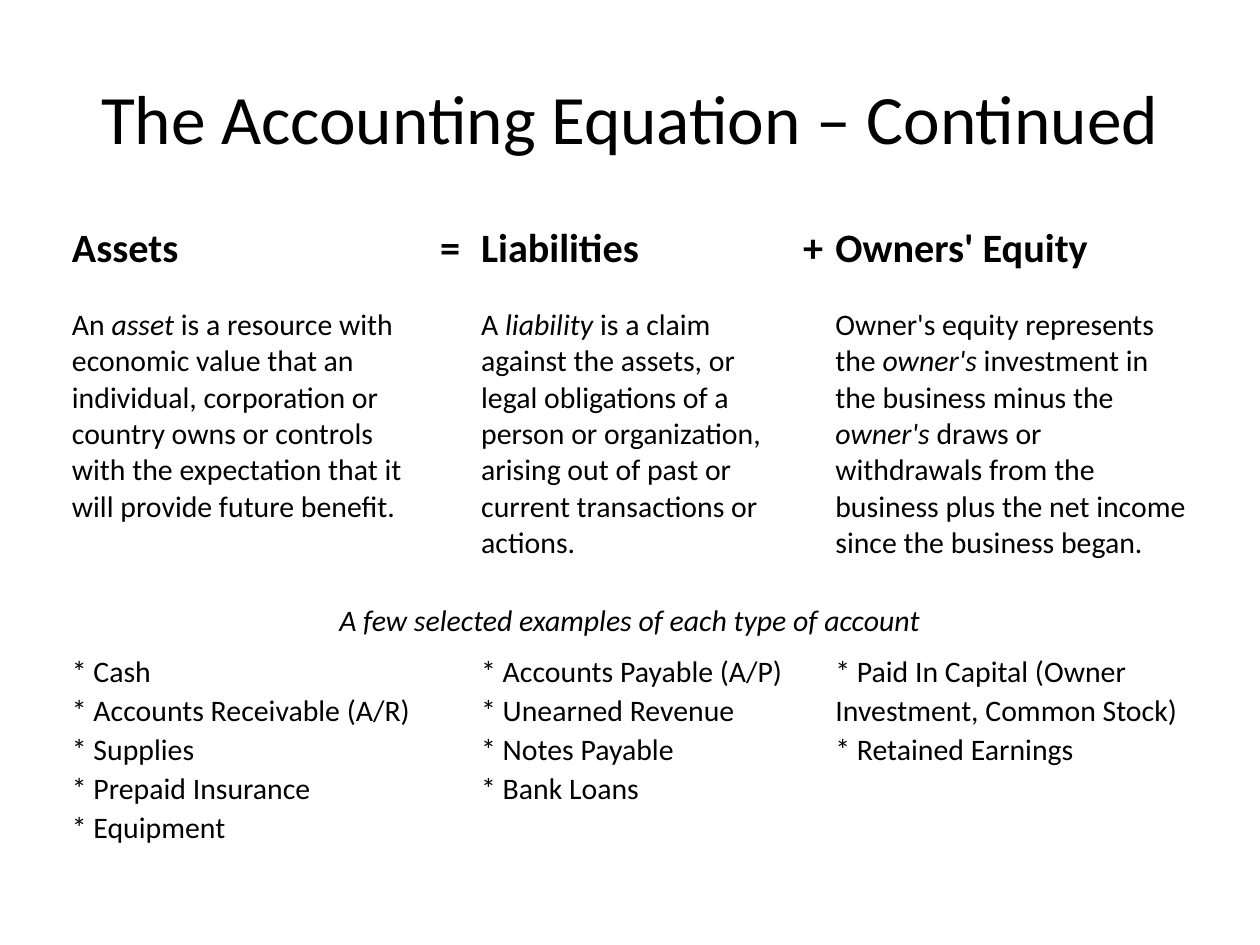
from dataclasses import dataclass

import lxml.etree
import pptx
import pptx.dml.color
import pptx.enum.text
import pptx.oxml.ns
import pptx.util

Cm = pptx.util.Cm
Pt = pptx.util.Pt
ALIGN = pptx.enum.text.PP_ALIGN
ANCHOR = pptx.enum.text.MSO_ANCHOR

FONT = "Calibri"
INK = "000000"
COLS = (7.06, 1.19, 6.3, 0.84, 7.16)
INSETS = {"margin_left": 0.03, "margin_right": 0.03, "margin_top": 0.03, "margin_bottom": 0}
PLAIN = {"first_row": False, "horz_banding": False}


@dataclass
class Row:
    """A table row; text between underscores is italic."""
    height: float
    texts: dict[int, str]
    size: float = 17
    bold: bool = False
    anchor: ANCHOR = ANCHOR.BOTTOM
    span: tuple[int, int] | None = None


ROWS = [
    Row(1.07, {0: "Assets", 1: "=", 2: "Liabilities", 3: "+", 4: "Owners' Equity"},
        size=23, bold=True),
    Row(0.64, {}),
    Row(5.87, {
        0: "An _asset_ is a resource with economic value that an individual, "
           "corporation or country owns or controls with the expectation that "
           "it will provide future benefit.",
        2: "A_ liability_ is a claim against the assets, or legal obligations of "
           "a person or organization, arising out of past or current "
           "transactions or actions.",
        4: "Owner's equity represents the _owner's_ investment in the business "
           "minus the _owner's_ draws or withdrawals from the business plus the "
           "net income since the business began.",
    }, anchor=ANCHOR.TOP),
    Row(0.86, {0: "_A few selected examples of each type of account_"}, span=(0, 4)),
    Row(1.02, {0: "* Cash", 2: "* Accounts Payable (A/P)", 4: "* Paid In Capital (Owner"},
        span=(2, 3)),
    Row(0.79, {0: "* Accounts Receivable (A/R)", 2: "* Unearned Revenue",
               4: "Investment, Common Stock)"}, span=(0, 1)),
    Row(0.79, {0: "* Supplies", 2: "* Notes Payable", 4: "* Retained Earnings"}),
    Row(0.79, {0: "* Prepaid Insurance", 2: "* Bank Loans"}),
    Row(0.79, {0: "* Equipment"}),
]


def style(font, size: float, color: str = INK, bold: bool = False, italic: bool = False) -> None:
    look = {"name": FONT, "size": Pt(size), "bold": bold, "italic": italic}
    for name, value in look.items():
        setattr(font, name, value)
    font.color.rgb = pptx.dml.color.RGBColor.from_string(color)


def write(par, text: str, size: float, bold: bool = False) -> None:
    for i, part in enumerate(text.split("_")):
        if part:
            run = par.add_run()
            run.text = part
            style(run.font, size, bold=bold, italic=i % 2 == 1)


def fill_cell(cell, row: Row, text: str, center: bool) -> None:
    cell.fill.background()
    cell.vertical_anchor = row.anchor
    for name, value in INSETS.items():
        setattr(cell, name, Cm(value))
    par = cell.text_frame.paragraphs[0]
    par.alignment = ALIGN.CENTER if center else ALIGN.LEFT
    if text:
        write(par, text, row.size, row.bold)
    else:
        # Small type keeps an empty cell from stretching its row
        lxml.etree.SubElement(par._p, pptx.oxml.ns.qn("a:endParaRPr"), sz="1000")


def add_title(slide, text: str) -> None:
    title = slide.shapes.title
    box = {"left": 1.27, "top": 0.76, "width": 22.86, "height": 3.18}
    for name, value in box.items():
        setattr(title, name, Cm(value))
    frame = title.text_frame
    frame.vertical_anchor = ANCHOR.MIDDLE
    frame.paragraphs[0].alignment = ALIGN.CENTER
    write(frame.paragraphs[0], text, 39.6)


def add_grid(slide, rows: list[Row]) -> None:
    high = sum(row.height for row in rows)
    table = slide.shapes.add_table(len(rows), len(COLS), Cm(1.42), Cm(4.45),
                                   Cm(sum(COLS)), Cm(high)).table
    for name, value in PLAIN.items():
        setattr(table, name, value)
    for col, width in zip(table.columns, COLS):
        col.width = Cm(width)
    for r, row in enumerate(rows):
        table.rows[r].height = Cm(row.height)
        if row.span:
            first, last = row.span
            table.cell(r, first).merge(table.cell(r, last))
        for c in range(len(COLS)):
            center = c in (1, 3) or row.span == (0, 4)
            fill_cell(table.cell(r, c), row, row.texts.get(c, ""), center)


def main() -> None:
    deck = pptx.Presentation()
    deck.slide_width, deck.slide_height = Cm(25.4), Cm(19.05)
    slide = deck.slides.add_slide(deck.slide_layouts[5])
    add_title(slide, "The Accounting Equation – Continued")
    add_grid(slide, ROWS)
    deck.save("out.pptx")


if __name__ == "__main__":
    main()
